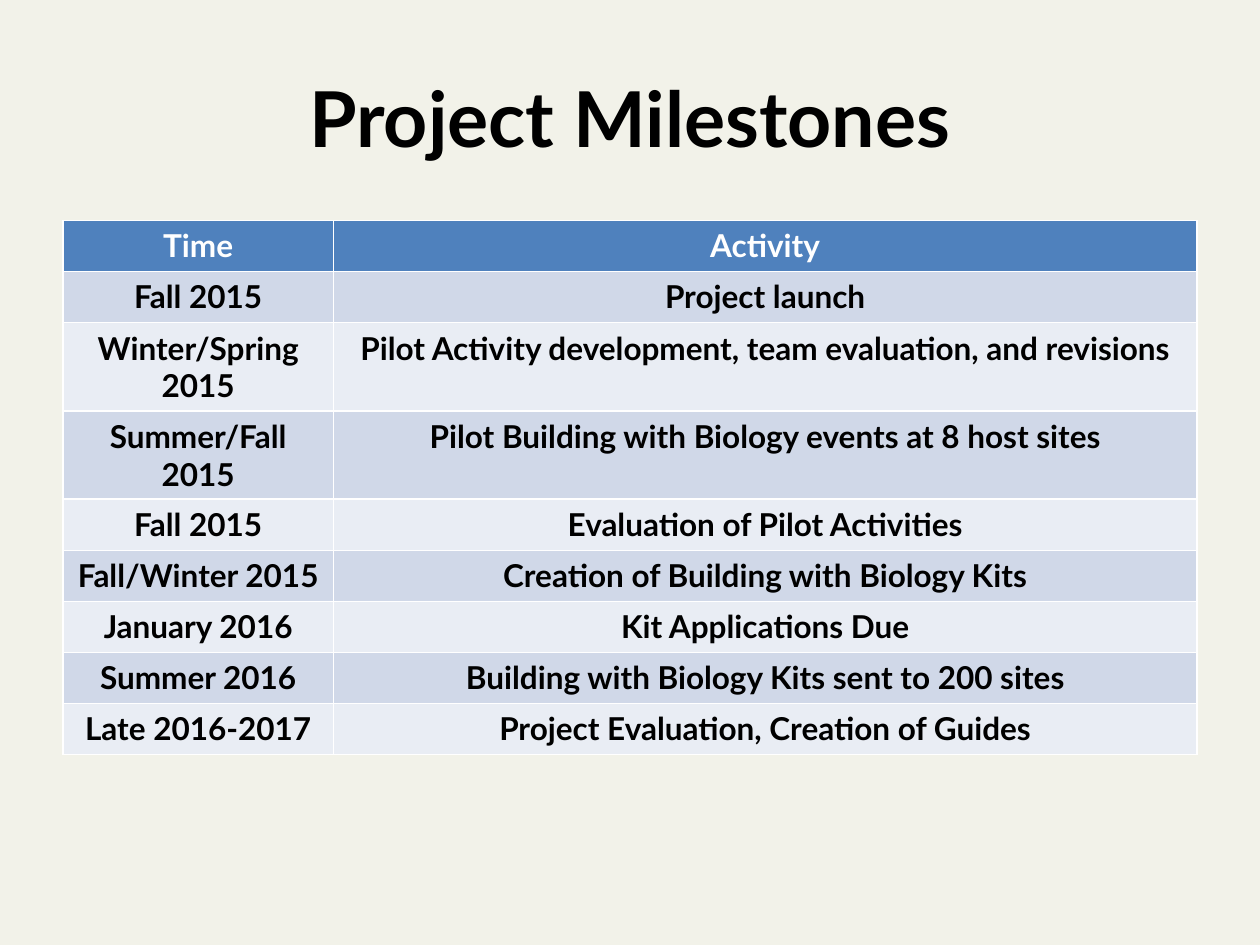
import pptx
import pptx.dml.color
import pptx.enum.text
import pptx.util

Pt = pptx.util.Pt
CENTER = pptx.enum.text.PP_ALIGN.CENTER
MIDDLE = pptx.enum.text.MSO_ANCHOR.MIDDLE

MILESTONES = [
    ("Time", "Activity"),
    ("Fall 2015", "Project launch"),
    ("Winter/Spring 2015", "Pilot Activity development, team evaluation, and revisions"),
    ("Summer/Fall 2015", "Pilot Building with Biology events at 8 host sites"),
    ("Fall 2015", "Evaluation of Pilot Activities"),
    ("Fall/Winter 2015", "Creation of Building with Biology Kits"),
    ("January 2016", "Kit Applications Due"),
    ("Summer 2016", "Building with Biology Kits sent to 200 sites"),
    ("Late 2016-2017", "Project Evaluation, Creation of Guides"),
]


def color(hex_code):
    return pptx.dml.color.RGBColor.from_string(hex_code)


class SlideBuilder:
    font = "Lato"
    ink = "000000"
    header_ink = "FFFFFF"
    header_fill = "4F81BD"
    band_fills = ("D0D8E8", "E9EDF4")

    def __init__(self, slide, background):
        self.slide = slide
        slide.background.fill.solid()
        slide.background.fill.fore_color.rgb = color(background)

    def set_text(self, frame, text, size, ink):
        frame.text = text
        paragraph = frame.paragraphs[0]
        paragraph.alignment = CENTER
        paragraph.font.name = self.font
        paragraph.font.size = Pt(size)
        paragraph.font.bold = True
        paragraph.font.color.rgb = color(ink)

    def title(self, text, left, top, width, height):
        heading = self.slide.shapes.title
        heading.left, heading.top = Pt(left), Pt(top)
        heading.width, heading.height = Pt(width), Pt(height)
        heading.text_frame.vertical_anchor = MIDDLE
        self.set_text(heading.text_frame, text, 44, self.ink)

    def table(self, rows, left, top, column_widths, row_height):
        # The default table style supplies the white rules
        grid = self.slide.shapes.add_table(
            len(rows), len(column_widths), Pt(left), Pt(top),
            Pt(sum(column_widths)), Pt(row_height * len(rows))).table
        for column, width in zip(grid.columns, column_widths):
            column.width = Pt(width)
        for row_index, row in enumerate(rows):
            grid.rows[row_index].height = Pt(row_height)
            if row_index == 0:
                fill, ink = self.header_fill, self.header_ink
            else:
                fill, ink = self.band_fills[(row_index - 1) % 2], self.ink
            for column_index, text in enumerate(row):
                cell = grid.cell(row_index, column_index)
                cell.fill.solid()
                cell.fill.fore_color.rgb = color(fill)
                self.set_text(cell.text_frame, text, 18, ink)


def main():
    deck = pptx.Presentation()
    deck.slide_width, deck.slide_height = Pt(720), Pt(540)
    title_only = deck.slide_layouts[5]
    builder = SlideBuilder(deck.slides.add_slide(title_only), "F2F2E9")

    # Heading
    builder.title("Project Milestones", 36, 21.6, 648, 90)

    # Schedule; rows with two lines of text grow to fit
    builder.table(MILESTONES, 36, 126, (154.5, 493.5), 29.2)

    deck.save("out.pptx")


if __name__ == "__main__":
    main()
